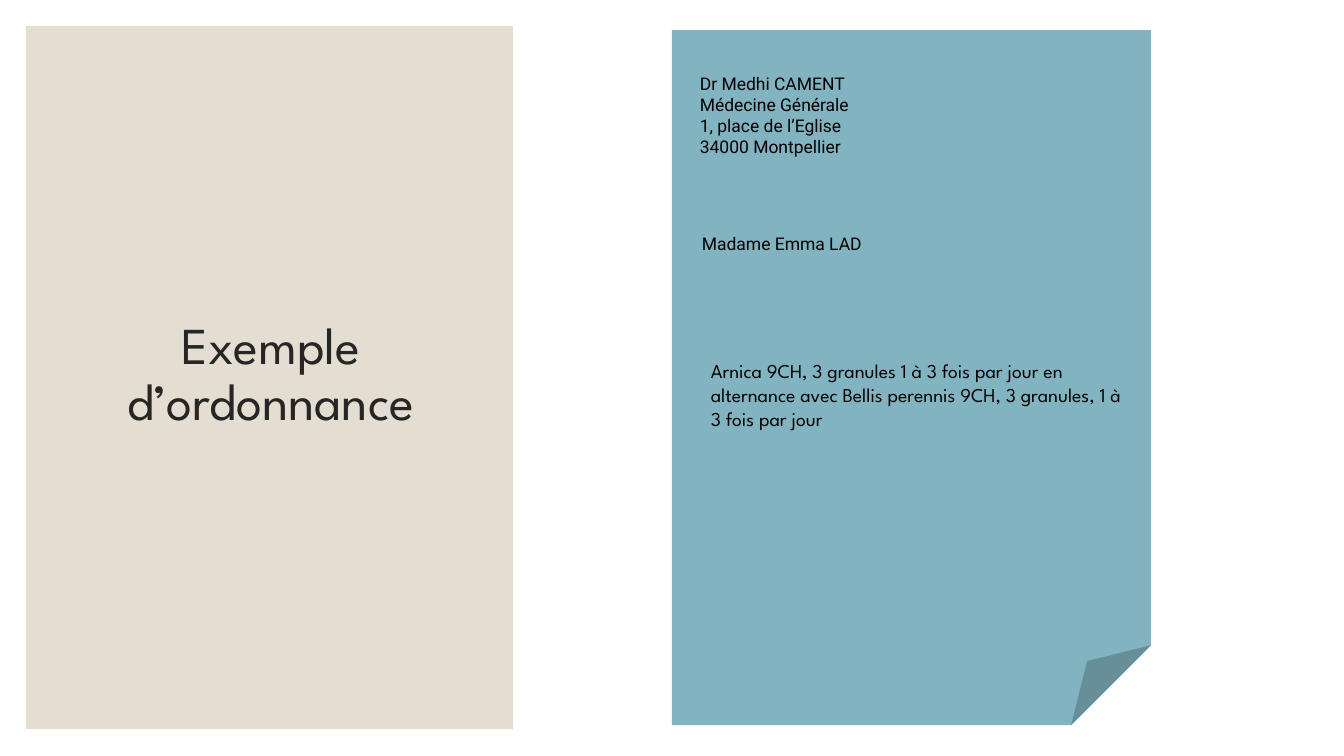
from pptx import Presentation
from pptx.dml.color import RGBColor as Rgb
from pptx.enum.shapes import MSO_SHAPE as Kind
from pptx.enum.text import MSO_ANCHOR as Anchor, PP_ALIGN as Align
from pptx.util import Emu, Pt

PX = 914400 / 100.8
COLORS = {"white": "FFFFFF", "sand": "E3DED1", "blue": "81B3C0",
          "dark": "262626", "black": "000000"}


def px(n):
    return Emu(round(n * PX))


class Page:
    title_font = "League Spartan"
    letter_font = "Roboto"

    def __init__(self, deck):
        self.slide = deck.slides.add_slide(deck.slide_layouts[6])
        self.paint(self.slide.background.fill, "white")

    def paint(self, fill, color):
        fill.solid()
        fill.fore_color.rgb = Rgb.from_string(COLORS[color])

    def panel(self, kind, box, color):
        shape = self.slide.shapes.add_shape(kind, *map(px, box))
        shape.shadow.inherit = False
        self.paint(shape.fill, color)
        shape.line.fill.background()

    def text(self, box, lines, size, font, color="black", align=Align.LEFT,
             anchor=Anchor.TOP, pitch=None, after=0):
        frame = self.slide.shapes.add_textbox(*map(px, box)).text_frame
        frame.word_wrap = True
        frame.vertical_anchor = anchor
        frame.text = "\n".join(lines)
        for par in frame.paragraphs:
            par.alignment = align
            par.line_spacing = pitch
            par.space_after = Pt(after)
            par.font.size = Pt(size)
            par.font.name = font
            par.font.color.rgb = Rgb.from_string(COLORS[color])


def main():
    deck = Presentation()
    deck.slide_width, deck.slide_height = px(1344), px(756)
    page = Page(deck)

    # Title panel
    page.panel(Kind.RECTANGLE, (26, 26, 487, 703), "sand")
    page.text((63, 61, 416, 629), ["Exemple d’ordonnance"], 37,
              page.title_font, "dark", Align.CENTER, Anchor.MIDDLE, 0.9)

    # Prescription sheet
    page.panel(Kind.FOLDED_CORNER, (672, 30, 479, 695), "blue")

    # Doctor and patient
    page.text((690, 68, 289, 99),
              ["Dr Medhi CAMENT", "Médecine Générale",
               "1, place de l’Eglise", "34000 Montpellier"],
              12.5, page.letter_font)
    page.text((692, 228, 289, 31), ["Madame Emma LAD"], 12.5,
              page.letter_font)

    # Treatment
    page.text((701, 354, 434, 81),
              ["Arnica 9CH, 3 granules 1 à 3 fois par jour en alternance "
               "avec Bellis perennis 9CH, 3 granules, 1 à 3 fois par jour"],
              14, page.title_font, pitch=Pt(17.1), after=6)

    deck.save("out.pptx")


if __name__ == "__main__":
    main()
